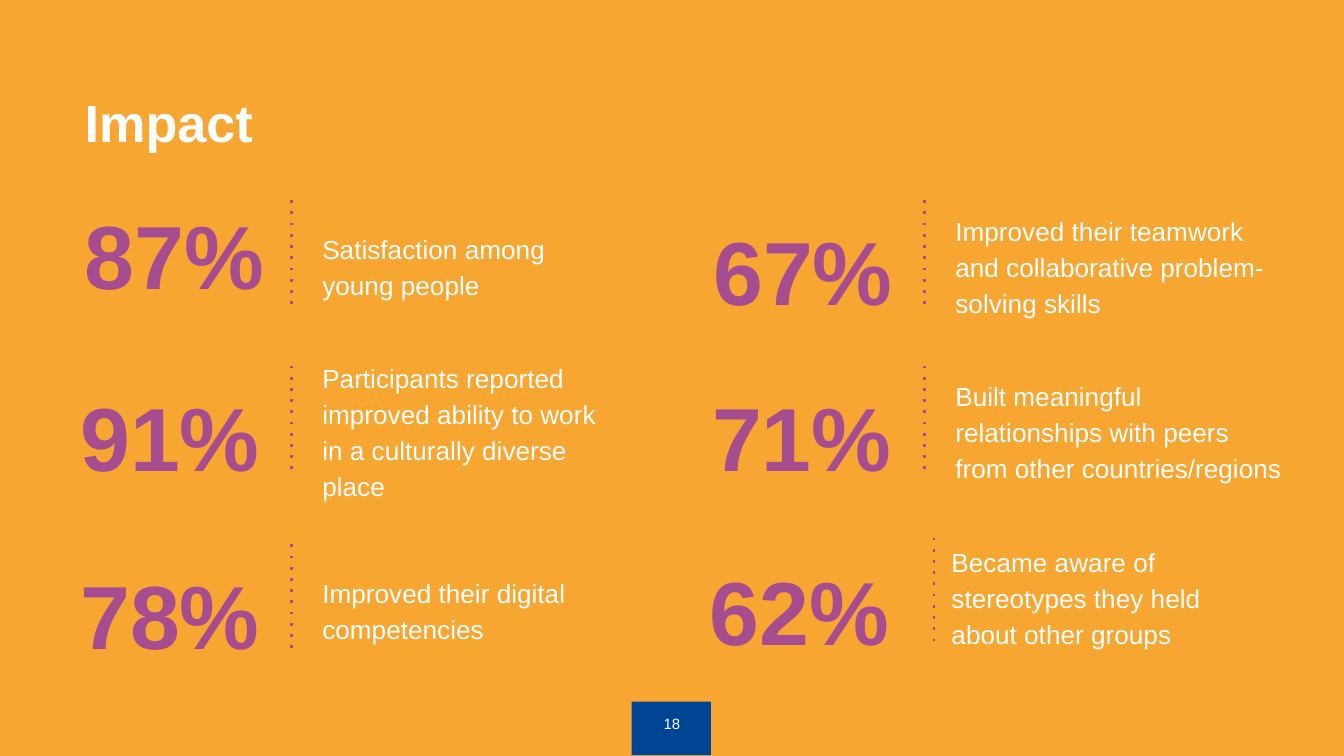
from lxml import etree
from pptx import Presentation
from pptx import util as u
from pptx.dml.color import RGBColor
from pptx.enum import shapes, text
from pptx.oxml.ns import qn

# Content
TITLE = "Impact"
PAGE_NUMBER = "18"
COLORS = {"background": "F7A632", "accent": "A64D8F", "badge": "004494", "white": "FFFFFF"}
STATS = [  # one list per column, top to bottom
    [("87%", "Satisfaction among young people"),
     ("91%", "Participants reported improved ability to work in a culturally diverse place"),
     ("78%", "Improved their digital competencies")],
    [("67%", "Improved their teamwork and collaborative problem-solving skills"),
     ("71%", "Built meaningful relationships with peers from other countries/regions"),
     ("62%", "Became aware of stereotypes they held about other groups")],
]

# Layout in inches
SLIDE_WIDTH = 10
SLIDE_HEIGHT = SLIDE_WIDTH * 9 / 16
COLUMNS = [{"number": 0.5, "rule": 2.17, "label": 2.3, "label_width": 2.33},
           {"number": 5.2, "rule": 6.88, "label": 7.01, "label_width": 2.65}]
ROW_TOPS = [1.39, 2.62, 3.95]
NUMBER_WIDTH, NUMBER_HEIGHT = 1.56, 1.03
RULE_OFFSET, RULE_HEIGHT = 0.1, 0.82
LABEL_OFFSET, LABEL_HEIGHT = 0.17, 0.82
# Cells that depart from the grid
ADJUST = {
    "87%": {"number": 0.53, "number_width": 8.94, "number_height": 3.5, "spacing": 1.0},
    "67%": {"number": 5.21, "label_width": 2.59},
    "62%": {"number": 5.21, "number_width": 1.67, "number_height": 0.55,
            "rule": 6.95, "rule_top": 4.0, "rule_height": 0.77,
            "label_top": 3.96, "label_width": 2.33, "label_height": 0.89,
            "inset": 0.07, "anchor": text.MSO_ANCHOR.TOP},
}


def color(name):
    return RGBColor.from_string(COLORS[name])


def fill_text(shape, words, size, tint, bold=False, spacing=1.0, after=0,
              align=text.PP_ALIGN.LEFT, anchor=text.MSO_ANCHOR.TOP, inset=0.1, side=0.1):
    frame = shape.text_frame
    frame_format = {"word_wrap": True, "auto_size": text.MSO_AUTO_SIZE.NONE,
                    "vertical_anchor": anchor,
                    "margin_left": u.Inches(side), "margin_right": u.Inches(side),
                    "margin_top": u.Inches(inset), "margin_bottom": u.Inches(inset)}
    para = frame.paragraphs[0]
    para_format = {"alignment": align, "line_spacing": spacing,
                   "space_before": u.Pt(0), "space_after": u.Pt(after)}
    span = para.add_run()
    span.text = words
    font_format = {"name": "Arial", "size": u.Pt(size), "bold": bold}
    for target, values in ((frame, frame_format), (para, para_format), (span.font, font_format)):
        for key, value in values.items():
            setattr(target, key, value)
    span.font.color.rgb = color(tint)


def add_text(page, left, top, width, height, words, size, tint, **options):
    box = page.shapes.add_textbox(*map(u.Inches, (left, top, width, height)))
    fill_text(box, words, size, tint, **options)


def add_dotted_rule(page, x, top, height):
    rule = page.shapes.add_connector(
        shapes.MSO_CONNECTOR.STRAIGHT, *map(u.Inches, (x, top, x, top + height)))
    rule.line.color.rgb = color("accent")
    rule.line.width = u.Pt(1.5)
    properties = rule._element.spPr
    etree.SubElement(properties.find(qn("a:ln")), qn("a:prstDash"), val="dot")
    etree.SubElement(properties, qn("a:effectLst"))


def add_stat(page, column, top, number, label):
    place = {"number_width": NUMBER_WIDTH, "number_height": NUMBER_HEIGHT,
             "rule_top": top + RULE_OFFSET, "rule_height": RULE_HEIGHT,
             "label_top": top + LABEL_OFFSET, "label_height": LABEL_HEIGHT,
             "spacing": 1.15, "inset": 0.1, "anchor": text.MSO_ANCHOR.MIDDLE,
             **column, **ADJUST.get(number, {})}
    insets = {"inset": place["inset"], "side": place["inset"]}
    add_text(page, place["number"], top, place["number_width"], place["number_height"],
             number, 48, "accent", bold=True, spacing=place["spacing"], after=10, **insets)
    add_dotted_rule(page, place["rule"], place["rule_top"], place["rule_height"])
    add_text(page, place["label"], place["label_top"], place["label_width"],
             place["label_height"], label, 14, "white", spacing=1.15, after=10,
             anchor=place["anchor"], **insets)


def main():
    deck = Presentation()
    deck.slide_width, deck.slide_height = u.Inches(SLIDE_WIDTH), u.Inches(SLIDE_HEIGHT)
    page = deck.slides.add_slide(deck.slide_layouts[5])
    page.background.fill.solid()
    page.background.fill.fore_color.rgb = color("background")

    # Page number badge
    badge = page.shapes.add_shape(shapes.MSO_SHAPE.RECTANGLE,
                                  *map(u.Inches, (4.7, 5.22, 0.59, 0.4)))
    badge.shadow.inherit = False
    badge.fill.solid()
    badge.fill.fore_color.rgb = color("badge")
    badge.line.fill.background()
    add_text(page, 4.7, 5.22, 0.6, 0.3, PAGE_NUMBER, 8, "white", align=text.PP_ALIGN.CENTER)

    # Title
    title = page.shapes.title
    title.left, title.top, title.width, title.height = map(u.Inches, (0.53, -0.12, 4.1, 1.31))
    fill_text(title, TITLE, 28, "white", bold=True, anchor=text.MSO_ANCHOR.BOTTOM, inset=0.05)

    # Statistics grid
    for column, stats in zip(COLUMNS, STATS):
        for top, (number, label) in zip(ROW_TOPS, stats):
            add_stat(page, column, top, number, label)

    deck.save("out.pptx")


if __name__ == "__main__":
    main()
